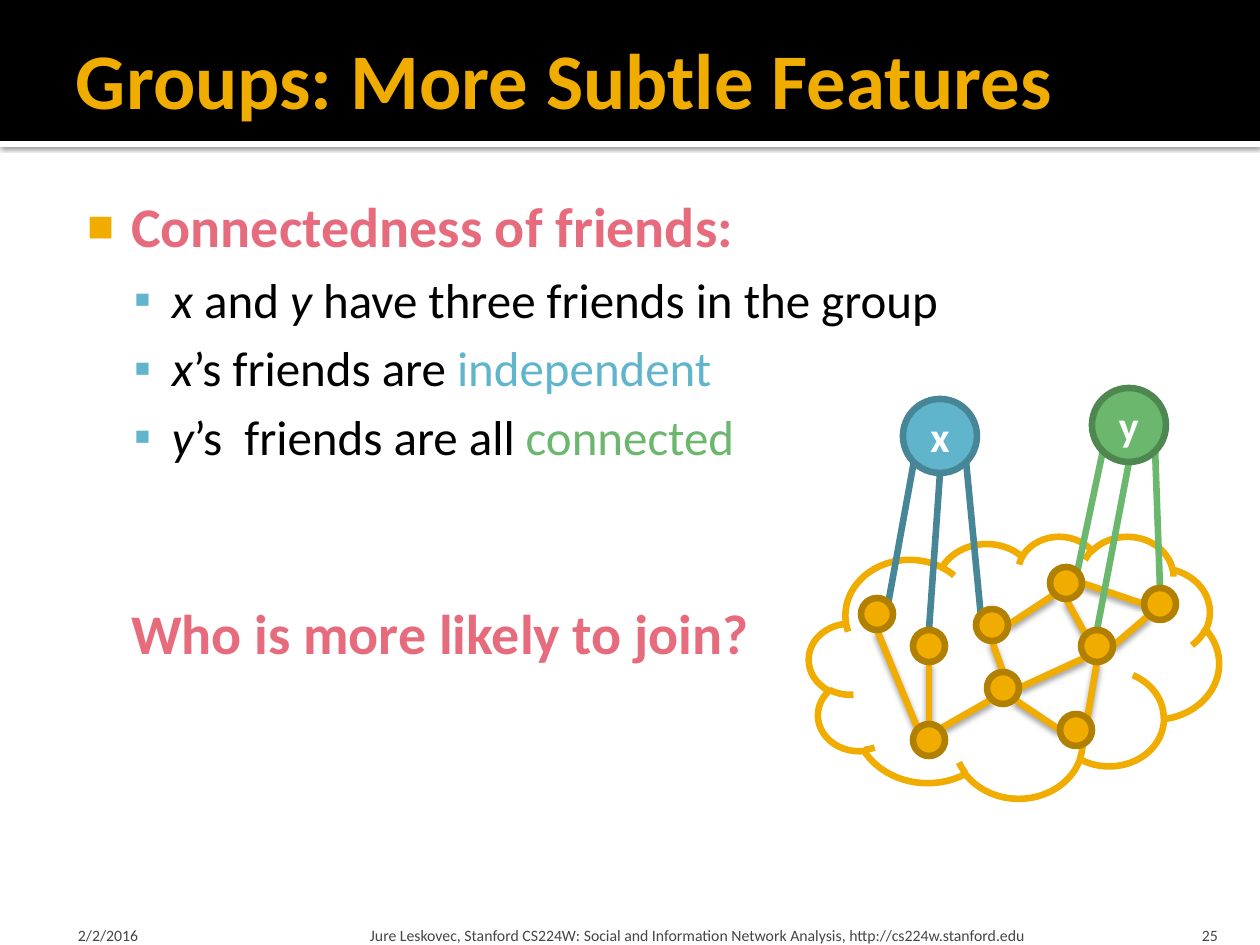
from lxml.etree import SubElement as Sub
from pptx import Presentation
from pptx.dml.color import RGBColor as RGB
from pptx.enum.shapes import MSO_CONNECTOR as Line, MSO_SHAPE as Kind
from pptx.enum.text import MSO_ANCHOR as Anchor, MSO_AUTO_SIZE as Fit, PP_ALIGN as Align
from pptx.oxml.ns import qn
from pptx.util import Pt

SCALE = 914400 / 126  # EMU per px
FONT = "Calibri"
BLACK, WHITE = RGB(0, 0, 0), RGB(255, 255, 255)
GOLD, BROWN = RGB(0xF0, 0xAD, 0x00), RGB(0xB2, 0x80, 0x00)
BLUE, TEAL = RGB(0x60, 0xB5, 0xCC), RGB(0x47, 0x86, 0x97)
GREEN, PINE = RGB(0x6B, 0xB7, 0x6D), RGB(0x4F, 0x87, 0x51)
ROSE, GREY = RGB(0xE6, 0x6C, 0x7D), RGB(0x45, 0x45, 0x45)
PEN = Pt(3.78)

# Group members and the two candidates: centre x, centre y, radius
NODES = {
    "a": (877, 614, 16), "b": (929, 646, 16), "c": (992, 625, 16),
    "d": (1066, 583, 16), "e": (1160, 604, 16), "f": (1097, 646, 16),
    "g": (1003, 688, 16), "h": (1076, 730, 16), "i": (929, 740, 16),
    "x": (940, 436, 37), "y": (1129, 425, 37),
}
# Compass points on a circle
DIAG = 0.707
SITES = {
    "n": (0, -1), "s": (0, 1), "w": (-1, 0), "e": (1, 0),
    "nw": (-DIAG, -DIAG), "ne": (DIAG, -DIAG),
    "sw": (-DIAG, DIAG), "se": (DIAG, DIAG),
}
# Each end is a node and a compass point
GROUP = ["i.nw a.s", "f.e e.sw", "d.s f.nw", "d.e e.w", "d.sw c.e", "g.sw i.ne",
         "g.n c.s", "i.n b.s", "f.sw g.e", "f.s h.ne", "h.w g.se"]
X_TIES = ["a.ne x.sw", "c.nw x.se", "b.n x.s"]
Y_TIES = ["d.ne y.sw", "e.n y.se", "f.n y.s"]


def px(n):
    return round(n * SCALE)


def write(par, text, size=28, color=BLACK, bold=False, italic=False):
    run = par.add_run()
    run.text = text
    font = run.font
    font.name, font.size, font.bold, font.italic = FONT, Pt(size), bold, italic
    font.color.rgb = color


def frame(shape, pads=(0, 0, 0, 0), anchor=Anchor.TOP, wrap=True):
    box = shape.text_frame
    box.word_wrap, box.auto_size, box.vertical_anchor = wrap, Fit.NONE, anchor
    box.margin_left, box.margin_top, box.margin_right, box.margin_bottom = map(px, pads)
    return box


def place(shape, *area):
    shape.left, shape.top, shape.width, shape.height = map(px, area)


def bullet(par, left, hang, char=None, color=None, share=100):
    props = par._p.get_or_add_pPr()
    props.set("marL", str(px(left)))
    props.set("indent", str(px(-hang)))
    if char is None:
        Sub(props, qn("a:buNone"))
        return
    Sub(Sub(props, qn("a:buClr")), qn("a:srgbClr"), val=str(color))
    Sub(props, qn("a:buSzPct"), val=str(share * 1000))
    Sub(props, qn("a:buFont"), typeface="Arial")
    Sub(props, qn("a:buChar"), char=char)


def shade(shape, blur=0, dist=0, alpha=0):
    """Set a downward shadow, or none when alpha is zero."""
    effects = Sub(shape._element.spPr, qn("a:effectLst"))
    if alpha:
        cast = Sub(effects, qn("a:outerShdw"), blurRad=str(Pt(blur)),
                   dist=str(Pt(dist)), dir="5400000", algn="ctr", rotWithShape="0")
        tint = Sub(cast, qn("a:srgbClr"), val="000000")
        Sub(tint, qn("a:alpha"), val=str(alpha * 1000))


def solid(slide, kind, area, fill, edge=None):
    shape = slide.shapes.add_shape(kind, *map(px, area))
    shape.fill.solid()
    shape.fill.fore_color.rgb = fill
    if edge is None:
        shape.line.fill.background()
    else:
        shape.line.color.rgb, shape.line.width = edge, PEN
    return shape


def spot(end):
    name, side = end.split(".")
    x, y, r = NODES[name]
    dx, dy = SITES[side]
    return px(x + r * dx), px(y + r * dy)


def tie(slide, pair, color, **cast):
    start, end = map(spot, pair.split())
    line = slide.shapes.add_connector(Line.STRAIGHT, *start, *end)
    line.line.color.rgb, line.line.width = color, PEN
    shade(line, **cast)


def node(slide, name, fill, edge, label=False):
    x, y, r = NODES[name]
    ball = solid(slide, Kind.OVAL, (x - r, y - r, 2 * r, 2 * r), fill, edge)
    ball.shadow.inherit = False
    if label:
        par = frame(ball, anchor=Anchor.MIDDLE, wrap=False).paragraphs[0]
        par.alignment = Align.CENTER
        write(par, name, size=24, color=WHITE, bold=True)


def header(slide):
    strip = solid(slide, Kind.RECTANGLE, (0, 141, 1260, 6), WHITE)
    shade(strip, blur=2.5, dist=0.8, alpha=60)
    band = solid(slide, Kind.RECTANGLE, (0, 0, 1260, 141), BLACK)
    band.shadow.inherit = False
    # Send both bands behind the title
    tree = slide.shapes._spTree
    for spot_no, shape in enumerate((strip, band), 2):
        tree.insert(spot_no, shape._element)
    title = slide.shapes.title
    place(title, 63, 10, 1134, 136)
    par = frame(title, (13, 6, 6, 6), Anchor.MIDDLE).paragraphs[0]
    par.alignment = Align.LEFT
    write(par, "Groups: More Subtle Features", size=45, color=GOLD, bold=True)


def body(slide):
    holder = slide.placeholders[1]
    place(holder, 63, 179, 1134, 725)
    box = frame(holder, (8, 13, 13, 6))
    par = box.paragraphs[0]
    par.space_before = Pt(0)
    bullet(par, 60, 44, "■", GOLD, 80)
    write(par, "Connectedness of friends:", size=32, color=ROSE, bold=True)
    points = [
        [("x", {"italic": True}), (" and ", {}), ("y", {"italic": True}),
         (" have three friends in the group", {})],
        [("x", {"italic": True}), ("’s friends are ", {}), ("independent", {"color": BLUE})],
        [("y", {"italic": True}), ("’s  friends are all ", {}), ("connected", {"color": GREEN})],
    ]
    for runs in points:
        par = box.add_paragraph()
        par.level, par.space_before = 1, Pt(5.6)
        bullet(par, 101, 38, "▪", BLUE)
        for text, style in runs:
            write(par, text, **style)
    par = box.add_paragraph()
    par.space_before = Pt(76)
    bullet(par, 60, 0)
    write(par, "Who is more likely to join?", size=32, color=ROSE, bold=True)


def footer(slide):
    credit = ("Jure Leskovec, Stanford CS224W: Social and Information Network Analysis, "
              "http://cs224w.stanford.edu")
    for left, width, pad, align, text in (
            (63, 294, 15, Align.LEFT, "2/2/2016"),
            (364, 759, 6, Align.LEFT, credit),
            (1130, 101, 13, Align.RIGHT, "25")):
        area = slide.shapes.add_textbox(*map(px, (left, 907, width, 38)))
        par = frame(area, (pad, 6, pad, 0), Anchor.BOTTOM).paragraphs[0]
        par.alignment = align
        write(par, text, size=9, color=GREY)


def network(slide):
    cloud = solid(slide, Kind.CLOUD, (809, 536, 410, 262), WHITE, GOLD)
    cloud.shadow.inherit = False
    for pair in GROUP:
        tie(slide, pair, GOLD, blur=3.5, dist=2, alpha=38)
    for pairs, color in ((X_TIES, TEAL), (Y_TIES, GREEN)):
        for pair in pairs:
            tie(slide, pair, color)
    for name in "abcdefghi":
        node(slide, name, GOLD, BROWN)
    node(slide, "x", BLUE, TEAL, label=True)
    node(slide, "y", GREEN, PINE, label=True)


def main():
    deck = Presentation()
    deck.slide_width, deck.slide_height = px(1260), px(945)
    slide = deck.slides.add_slide(deck.slide_layouts[1])
    header(slide)
    body(slide)
    footer(slide)
    network(slide)
    deck.save("out.pptx")


if __name__ == "__main__":
    main()
